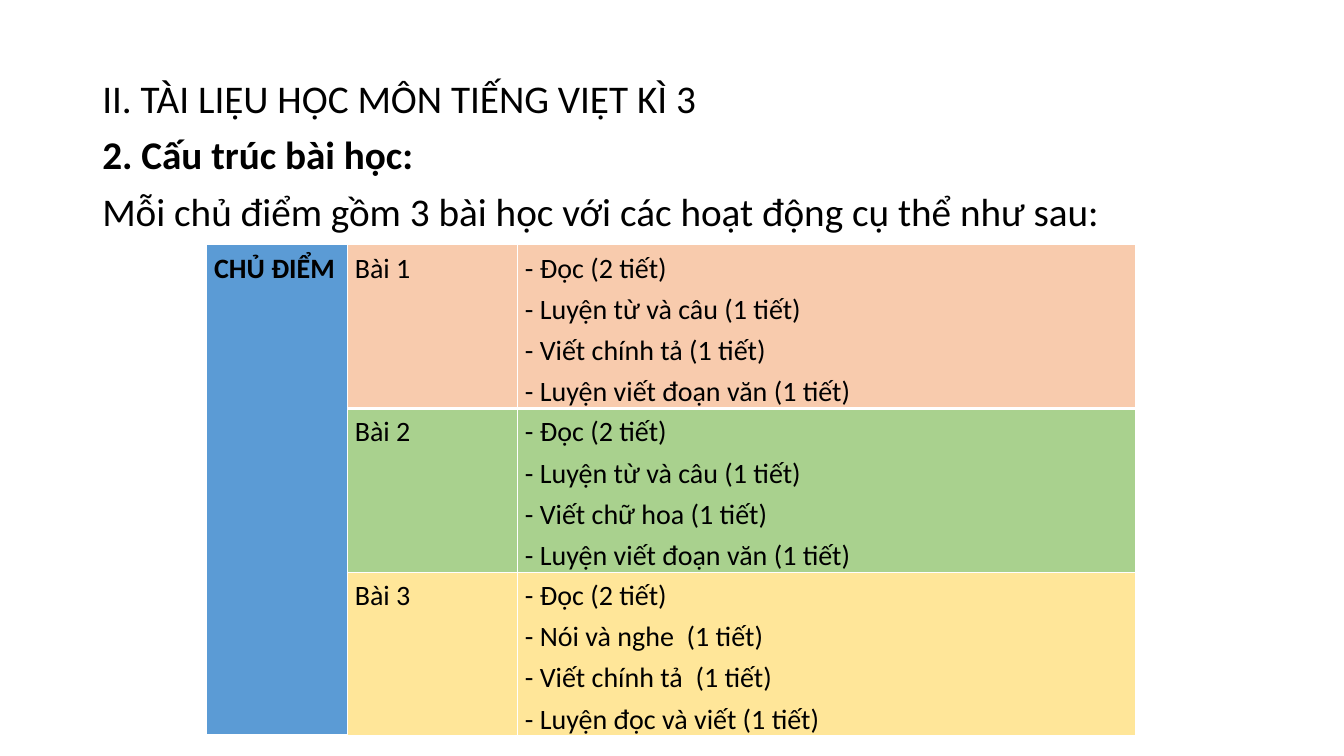
from pptx import Presentation
from pptx.dml.color import RGBColor
from pptx.enum.text import PP_ALIGN
from pptx.oxml import parse_xml
from pptx.oxml.ns import nsdecls
from pptx.util import Emu, Pt

PX = 9525  # 96 px to the inch
FONT = "Calibri"
BLACK, WHITE, BLUE = "000000", "FFFFFF", "5B9BD5"

HEADING = [
    ("II. TÀI LIỆU HỌC MÔN TIẾNG VIỆT KÌ 3", False),
    ("2. Cấu trúc bài học:", True),
    ("Mỗi chủ điểm gồm 3 bài học với các hoạt động cụ thể như sau:", False),
]
LESSONS = [
    ("Bài 1", "F8CBAD", ["- Đọc (2 tiết)", "- Luyện từ và câu (1 tiết)",
                         "- Viết chính tả (1 tiết)", "- Luyện viết đoạn văn (1 tiết)"]),
    ("Bài 2", "A9D18E", ["- Đọc (2 tiết)", "- Luyện từ và câu (1 tiết)",
                         "- Viết chữ hoa (1 tiết)", "- Luyện viết đoạn văn (1 tiết)"]),
    ("Bài 3", "FFE699", ["- Đọc (2 tiết)", "- Nói và nghe  (1 tiết)",
                         "- Viết chính tả  (1 tiết)", "- Luyện đọc và viết (1 tiết)"]),
]


def px(n):
    return Emu(n * PX)


def color(value):
    return RGBColor.from_string(value)


def format_runs(p, size, bold):
    for r in p.runs:
        r.font.name = FONT
        r.font.size = Pt(size)
        r.font.bold = bold
        r.font.color.rgb = color(BLACK)


def set_borders(cell, bottom):
    """Draw white borders; only the bottom one varies in width."""
    tcPr = cell._tc.get_or_add_tcPr()
    for i, (side, width) in enumerate(zip("LRTB", (1, 1, 1, bottom))):
        tcPr.insert(i, parse_xml(
            f'<a:ln{side} {nsdecls("a")} w="{Pt(width)}"><a:solidFill>'
            f'<a:srgbClr val="{WHITE}"/></a:solidFill></a:ln{side}>'))


def fill_cell(cell, lines, fill, bold=False, bottom=1):
    cell.fill.solid()
    cell.fill.fore_color.rgb = color(fill)
    cell.margin_left = cell.margin_right = px(7)
    cell.margin_top = cell.margin_bottom = 0
    cell.text_frame.text = "\n".join(lines)
    for p in cell.text_frame.paragraphs:
        p.alignment = PP_ALIGN.JUSTIFY
        p.line_spacing = 1.2
        format_runs(p, 20, bold)
    set_borders(cell, bottom)


def add_heading(s, x, y, w, h):
    tf = s.shapes.add_textbox(px(x), px(y), px(w), px(h)).text_frame
    tf.word_wrap = True
    tf.text = "\n".join(text for text, _ in HEADING)
    for p, (_, bold) in zip(tf.paragraphs, HEADING):
        p.line_spacing = 0.9
        p.space_before = Pt(10)
        format_runs(p, 28, bold)


def add_lesson_table(s, x, y, w, h):
    rows = len(LESSONS)
    table = s.shapes.add_table(rows, 3, px(x), px(y), px(w), px(h)).table
    topic_w, lesson_w = 134, 162
    for col, width in zip(table.columns, (topic_w, lesson_w, w - topic_w - lesson_w)):
        col.width = px(width)

    # Topic column spans every lesson
    table.cell(0, 0).merge(table.cell(rows - 1, 0))
    fill_cell(table.cell(0, 0), ["CHỦ ĐIỂM"], BLUE, bold=True, bottom=3)

    # One coloured row per lesson, with a thick rule under the first
    for i, (name, fill, activities) in enumerate(LESSONS):
        bottom = 3 if i == 0 else 1
        fill_cell(table.cell(i, 1), [name], fill, bottom=bottom)
        fill_cell(table.cell(i, 2), activities, fill, bottom=bottom)


def main():
    prs = Presentation()
    prs.slide_width, prs.slide_height = px(1280), px(720)
    s = prs.slides.add_slide(prs.slide_layouts[6])
    add_heading(s, 88, 71, 1104, 578)
    add_lesson_table(s, 197, 233, 885, 468)
    prs.save("out.pptx")


if __name__ == "__main__":
    main()
